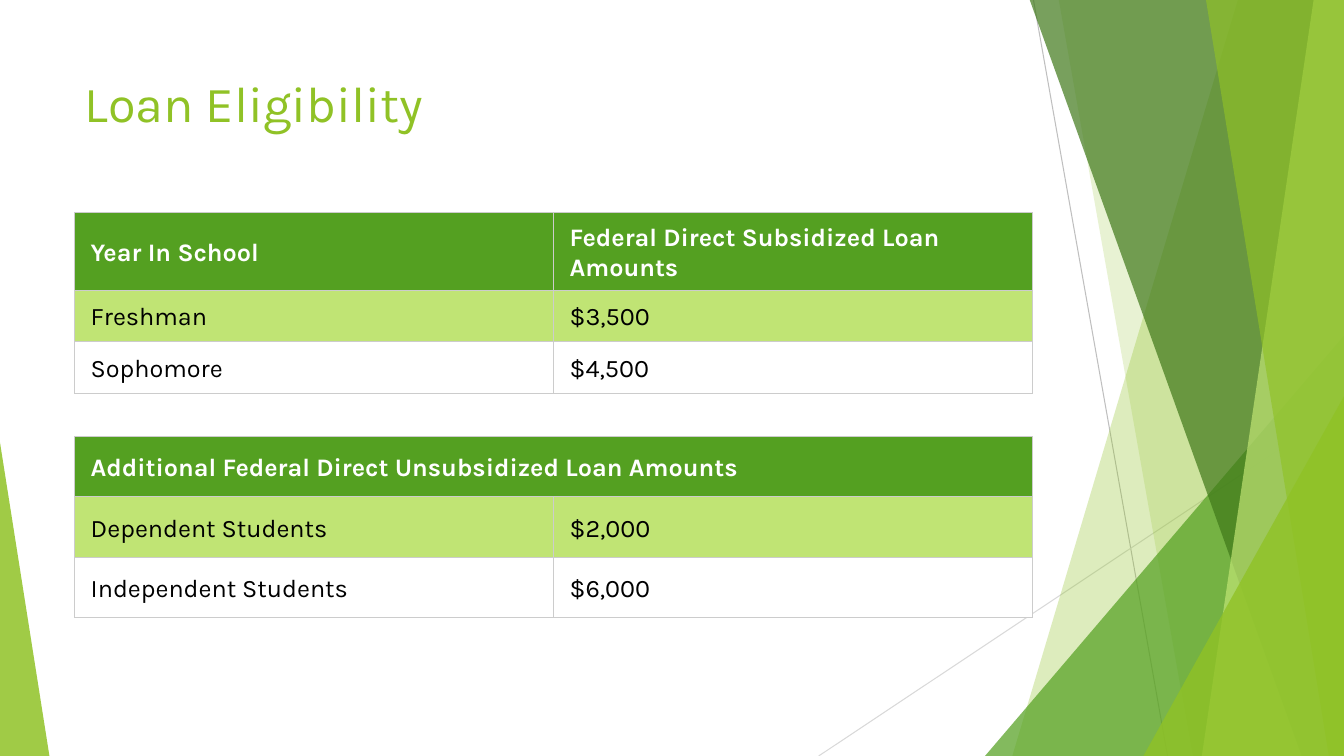
from pptx import Presentation
from pptx.dml.color import RGBColor
from pptx.enum.shapes import MSO_CONNECTOR, MSO_SHAPE
from pptx.enum.text import MSO_ANCHOR, PP_ALIGN
from pptx.oxml import parse_xml
from pptx.oxml.ns import nsdecls, qn
from pptx.util import Inches, Pt
from lxml import etree

FONT = "Karla"
COLORS = {
    "lime": "90C226", "green": "54A021", "forest": "3F7819", "pale": "C0E474",
    "white": "FFFFFF", "black": "000000", "border": "CCCCCC",
    "gray": "BFBFBF", "light gray": "D9D9D9",
}
WIDTH, HEIGHT, TOP = 13.33, 7.5, -0.01


def fill_translucent(shape, color, opacity):
    """Fill a facet without outline or shadow; opacity is in percent."""
    shape.shadow.inherit = False
    shape.line.fill.background()
    shape.fill.solid()
    shape.fill.fore_color.rgb = RGBColor.from_string(COLORS[color])
    color_element = shape.fill._xPr.find(qn("a:solidFill"))[0]
    etree.SubElement(color_element, qn("a:alpha"), val=str(opacity * 1000))


def format_text(text_frame, **font_values):
    font = text_frame.paragraphs[0].runs[0].font
    font.color.rgb = RGBColor.from_string(COLORS[font_values.pop("color")])
    for name, value in {"name": FONT, **font_values}.items():
        setattr(font, name, value)


presentation = Presentation()
presentation.slide_width = Inches(WIDTH)
presentation.slide_height = Inches(HEIGHT)
slide = presentation.slides.add_slide(presentation.slide_layouts[5])
shapes = slide.shapes

# Thin background lines
for start_x, start_y, end_x, end_y, color in [
    (10.25, 0, 11.58, HEIGHT, "gray"),
    (WIDTH, 4.03, 8.12, HEIGHT, "light gray"),
]:
    line = shapes.add_connector(
        MSO_CONNECTOR.STRAIGHT, *map(Inches, (start_x, start_y, end_x, end_y)))
    line.line.color.rgb = RGBColor.from_string(COLORS[color])
    line.line.width = Pt(0.75)
    etree.SubElement(line._element.spPr, qn("a:effectLst"))

# Facets from back to front: bands (top x, bottom x) reach the right edge,
# triangles (left, top, width, apex) stand on the bottom edge
for facet, color, opacity in [
    ((12.28, 10.04), "lime", 30),
    ((10.5, 11.83), "lime", 20),
    ((9.77, 3.33, 3.56, 1), "green", 72),
    ((10.21, 12.91), "forest", 70),
    ((13.03, 11.92), "pale", 70),
    ((11.96, 13.18), "lime", 65),
    ((11.34, 3.93, 1.99, 1), "lime", 80),
    ((0, 4.39, 0.49, 0), "lime", 85),
]:
    if len(facet) == 2:
        top_x, bottom_x = facet
        builder = shapes.build_freeform(Inches(top_x), Inches(TOP))
        corners = [(WIDTH, TOP), (WIDTH, HEIGHT), (bottom_x, HEIGHT)]
        builder.add_line_segments([(Inches(x), Inches(y)) for x, y in corners])
        shape = builder.convert_to_shape()
    else:
        left, top, width, apex = facet
        shape = shapes.add_shape(
            MSO_SHAPE.ISOSCELES_TRIANGLE,
            *map(Inches, (left, top, width, HEIGHT - top)))
        shape.adjustments[0] = apex
    fill_translucent(shape, color, opacity)

# Title, brought in front of the facets
title = shapes.title
shapes._spTree.append(title._element)
title.left, title.top, title.width, title.height = map(Inches, (0.74, 0.67, 9.4, 1.44))
title.text_frame.text = "Loan Eligibility"
title.text_frame.vertical_anchor = MSO_ANCHOR.TOP
title.text_frame.paragraphs[0].alignment = PP_ALIGN.LEFT
format_text(title.text_frame, size=Pt(36), color="lime")

# Loan tables
CELL_FORMAT = {
    "margin_left": Inches(0.16), "margin_top": Inches(0.1),
    "margin_right": Inches(0.02), "margin_bottom": Inches(0.07),
    "vertical_anchor": MSO_ANCHOR.MIDDLE,
}
ROW_COLORS = [("green", "white"), ("pale", "black"), ("white", "black")]
LOAN_TABLES = [
    (2.11, [0.77, 0.51, 0.51], [
        ("Year In School", "Federal Direct Subsidized Loan Amounts"),
        ("Freshman", "$3,500"),
        ("Sophomore", "$4,500"),
    ]),
    (4.33, [0.6, 0.6, 0.6], [
        ("Additional Federal Direct Unsubsidized Loan Amounts",),
        ("Dependent Students", "$2,000"),
        ("Independent Students", "$6,000"),
    ]),
]
for top, row_heights, rows in LOAN_TABLES:
    table = shapes.add_table(
        len(rows), 2, *map(Inches, (0.74, top, 9.5, sum(row_heights)))).table
    for row_index, texts in enumerate(rows):
        table.rows[row_index].height = Inches(row_heights[row_index])
        fill_color, text_color = ROW_COLORS[row_index]
        if len(texts) == 1:
            table.cell(row_index, 0).merge(table.cell(row_index, 1))
        for column_index in range(2):
            cell = table.cell(row_index, column_index)
            for name, value in CELL_FORMAT.items():
                setattr(cell, name, value)
            properties = cell._tc.get_or_add_tcPr()
            for side in ("lnL", "lnR", "lnT", "lnB"):
                properties.append(parse_xml(
                    f'<a:{side} {nsdecls("a")} w="{Pt(0.75)}"><a:solidFill>'
                    f'<a:srgbClr val="{COLORS["border"]}"/></a:solidFill></a:{side}>'))
            cell.fill.solid()
            cell.fill.fore_color.rgb = RGBColor.from_string(COLORS[fill_color])
            if column_index < len(texts):
                cell.text = texts[column_index]
                format_text(cell.text_frame, size=Pt(18), color=text_color,
                            bold=row_index == 0)

presentation.save("out.pptx")
